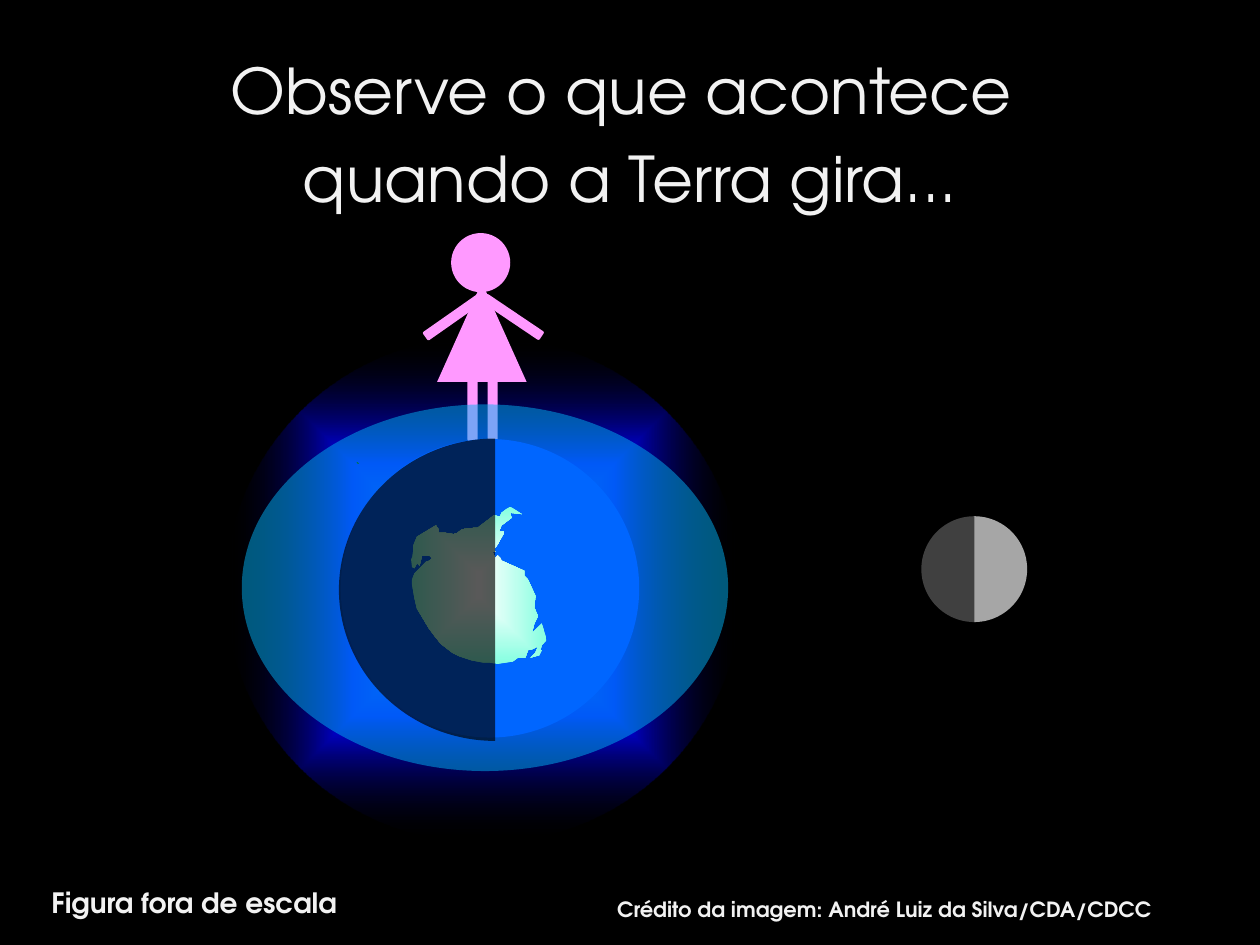
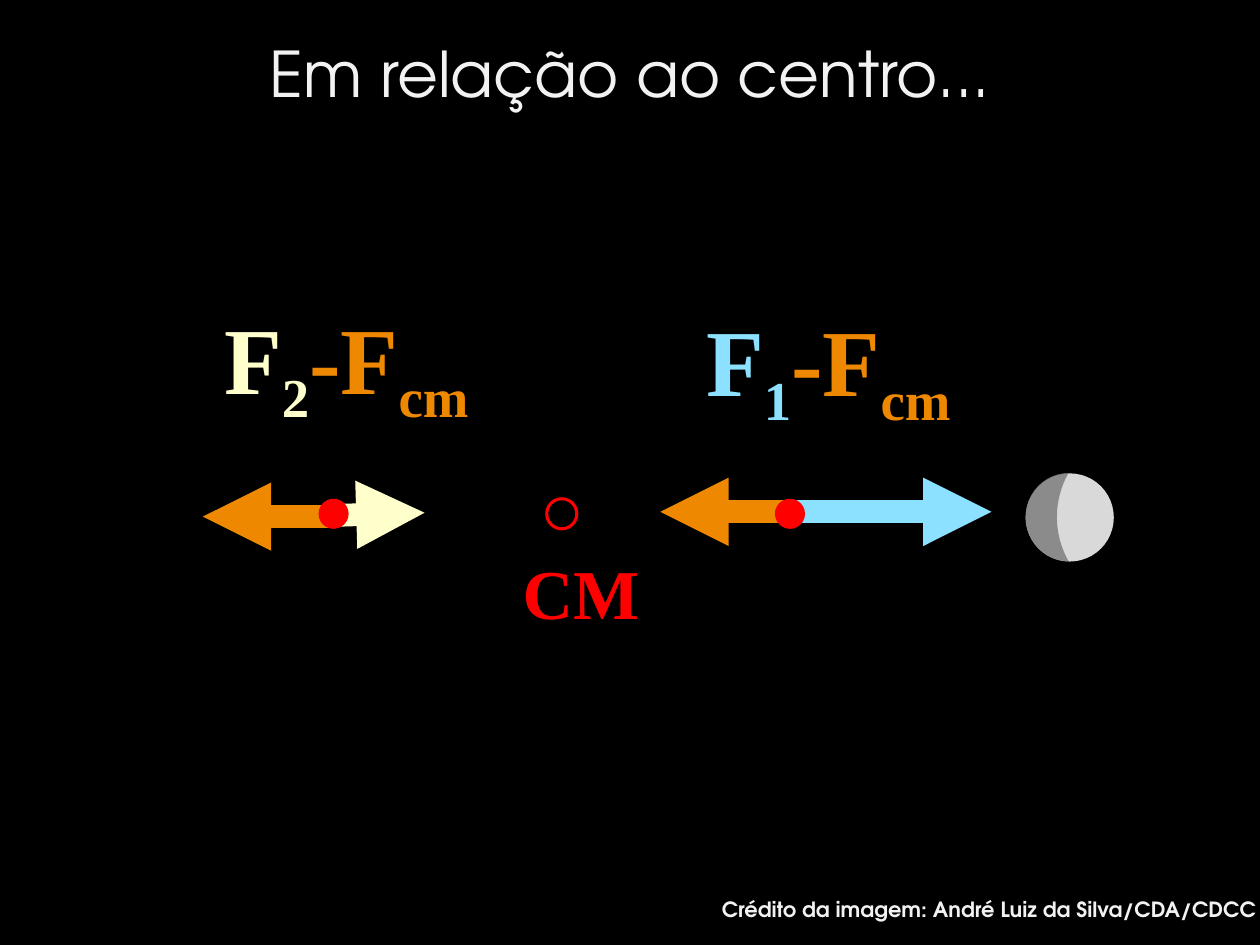
import pptx
import pptx.util
import pptx.dml.color
import pptx.enum.shapes
import pptx.enum.text
import pptx.oxml
import pptx.oxml.ns

Pt = pptx.util.Pt
Shape = pptx.enum.shapes.MSO_SHAPE
Align = pptx.enum.text.PP_ALIGN
qn = pptx.oxml.ns.qn

SANS, SERIF = "TeX Gyre Adventor", "Times New Roman"
COLORS = {
    "space": "000000", "text": "F2F2F2", "girl": "FF99FF", "earth": "0066FF",
    "halo": "0000FF", "tide": "00B0F0", "ice": "FFFFFF", "coast": "85FFE0",
    "isle": "008000", "day": "A6A6A6", "night": "404040", "moon": "D9D9D9",
    "shade": "707070", "mass": "EE8800", "near": "8BE1FF", "far": "FFFFCC",
    "red": "FF0000",
}
# Outlines in hundredths of an inch
LAND = [
    (401, 526), (407, 525), (411, 522), (417, 522), (419, 516), (423, 515),
    (427, 513), (425, 518), (421, 522), (428, 520), (430, 516), (429, 516),
    (430, 512), (434, 508), (430, 495), (422, 503), (424, 495), (427, 489),
    (424, 482), (425, 473), (419, 460), (416, 457), (416, 453), (398, 445),
    (397, 443), (395, 441), (393, 443), (391, 438), (393, 438), (392, 436),
    (395, 432), (396, 430), (400, 423), (400, 422), (396, 422), (398, 417),
    (406, 411), (405, 407), (414, 408), (405, 402), (402, 404), (398, 407),
    (397, 410), (392, 409), (379, 419), (376, 419), (367, 420), (363, 423),
    (360, 424), (354, 423), (348, 423), (348, 420), (346, 417), (331, 426),
    (328, 433), (328, 437), (327, 444), (326, 442), (327, 450), (329, 451),
    (331, 447), (333, 449), (335, 441), (341, 441), (343, 443), (341, 445),
    (338, 446), (332, 452), (329, 455), (327, 460), (327, 464), (329, 475),
    (331, 483), (340, 498), (346, 506), (350, 511), (359, 518), (365, 521),
    (374, 524), (384, 526), (389, 526), (395, 527),
]
ISLE = [(283, 367), (284, 368), (285, 368), (284, 367)]


def rgb(name):
    return pptx.dml.color.RGBColor.from_string(COLORS[name])


def paint(item, color, alpha=None):
    """Fill with one colour, without outline or shadow."""
    item.shadow.inherit = False
    item.line.fill.background()
    item.fill.solid()
    item.fill.fore_color.rgb = rgb(color)
    if alpha:
        tone = item.fill._xPr.find(qn("a:solidFill"))[0]
        tone.append(tone.makeelement(qn("a:alpha"), {"val": str(alpha * 1000)}))


def glow(item, stops):
    """Swap the fill for a gradient from the centre; stops are (percent, colour, opacity)."""
    marks = "".join(
        f'<a:gs pos="{pos * 1000}"><a:srgbClr val="{COLORS[color]}">'
        f'<a:alpha val="{alpha * 1000}"/></a:srgbClr></a:gs>'
        for pos, color, alpha in stops)
    grad = pptx.oxml.parse_xml(
        f'<a:gradFill {pptx.oxml.ns.nsdecls("a")} rotWithShape="1"><a:gsLst>{marks}</a:gsLst>'
        '<a:path path="shape"><a:fillToRect l="50000" t="50000" r="50000" b="50000"/>'
        '</a:path></a:gradFill>')
    old = item.fill._xPr.find(qn("a:solidFill"))
    old.getparent().replace(old, grad)


def add(shapes, kind, box, color, alpha=None, turn=0):
    item = shapes.add_shape(kind, *map(Pt, box))
    item.rotation = turn
    paint(item, color, alpha)
    return item


def half(shapes, box, ends, color, alpha=None):
    """Draw half a disc; box bounds the whole disc, ends are angles in degrees."""
    item = add(shapes, Shape.CHORD, box, color, alpha)
    for i, angle in enumerate(ends):
        item.adjustments[i] = angle * 0.6


def trace(shapes, points, color):
    pen = shapes.build_freeform(*points[0], scale=Pt(0.72))
    pen.add_line_segments(points[1:], close=True)
    item = pen.convert_to_shape()
    paint(item, color)
    return item


def write(par, text, size, color, face=SANS, bold=True, base=0):
    run = par.add_run()
    run.text = text
    font = run.font
    font.size, font.name, font.bold = Pt(size), face, bold
    font.color.rgb = rgb(color)
    if base:
        run._r.get_or_add_rPr().set("baseline", str(base * 1000))


def label(slide, box, runs, size, face=SANS, align=Align.CENTER):
    """Add a one-line box; runs are (text, colour, baseline percent)."""
    frame = slide.shapes.add_textbox(*map(Pt, box)).text_frame
    frame.word_wrap = True
    frame.auto_size = pptx.enum.text.MSO_AUTO_SIZE.SHAPE_TO_FIT_TEXT
    par = frame.paragraphs[0]
    par.alignment = align
    for text, color, base in runs:
        write(par, text, size, color, face, base=base)


def start(deck, top, lines, left):
    """Add a slide with its title lines and the credit."""
    slide = deck.slides.add_slide(deck.slide_layouts[5])
    title = slide.shapes.title
    title.left, title.top, title.width, title.height = map(Pt, (0, top, 720, 90))
    frame = title.text_frame
    frame.auto_size = pptx.enum.text.MSO_AUTO_SIZE.NONE
    frame.vertical_anchor = pptx.enum.text.MSO_ANCHOR.TOP
    for i, text in enumerate(lines):
        par = frame.add_paragraph() if i else frame.paragraphs[0]
        par.alignment = Align.CENTER
        par.line_spacing = 1.0
        par.space_before = Pt(7.2 if i else 0)
        write(par, text, 36, "text", bold=False)
    label(slide, (left, 509, 726 - left, 21.6),
          [("Crédito da imagem: André Luiz da Silva/CDA/CDCC", "text", 0)], 12, align=Align.LEFT)
    return slide


def girl(slide):
    parts = slide.shapes.add_group_shape().shapes
    limbs = [(267.1, 212.4, 0), (278.6, 212.4, 0), (290.2, 161.3, 124), (256.3, 161.3, 55)]
    for left, top, turn in limbs:
        add(parts, Shape.ROUNDED_RECTANGLE, (left, top, 5.8, 39.6), "girl", turn=turn)
    add(parts, Shape.ISOSCELES_TRIANGLE, (249.8, 161.3, 51.1, 56.9), "girl")
    add(parts, Shape.OVAL, (257.8, 133.2, 33.8, 33.8), "girl")


def arrow(slide, ends, color):
    line = slide.shapes.add_connector(pptx.enum.shapes.MSO_CONNECTOR.STRAIGHT, *map(Pt, ends))
    line.line.width = Pt(13)
    line.line.color.rgb = rgb(color)
    edge = line.line._get_or_add_ln()
    edge.append(edge.makeelement(qn("a:tailEnd"), {"type": "triangle"}))
    props = line._element.spPr
    props.append(props.makeelement(qn("a:effectLst"), {}))


def force(slide, left, top, width, digit, color):
    label(slide, (left, top, width, 72.7),
          [("F", color, 0), (digit, color, -25), ("-F", "mass", 0), ("cm", "mass", -25)],
          54, SERIF)


def spin(deck):
    slide = start(deck, 26, ["Observe o que acontece ", "quando a Terra gira..."], 345.6)
    shapes = slide.shapes
    halo = add(shapes, Shape.OVAL, (128.9, 192.2, 294.5, 289.4), "earth")
    glow(halo, [(0, "earth", 100), (50, "halo", 100), (100, "space", 0)])
    girl(slide)
    add(shapes, Shape.OVAL, (138.2, 231.1, 277.9, 209.5), "tide", 51)

    disc = (526.5, 295, 60.5, 60.5)
    half(shapes, disc, (270, 90), "day")
    half(shapes, disc, (90, 270), "night")

    add(shapes, Shape.OVAL, (194.7, 250.9, 170.6, 170.6), "earth")
    land = trace(shapes, LAND, "ice")
    glow(land, [(3, "ice", 100), (100, "coast", 100)])
    trace(shapes, ISLE, "isle")
    half(shapes, (193.7, 250.6, 178.6, 172.8), (90, 270), "space", 65)
    label(slide, (16, 502.6, 190, 26.6), [("Figura fora de escala", "text", 0)], 16)


def forces(deck):
    slide = start(deck, 16, ["Em relação ao centro..."], 405.4)
    shapes = slide.shapes
    arrow(slide, (190.1, 295.2, 115.9, 295.2), "mass")
    arrow(slide, (450.7, 292.5, 377.3, 292.5), "mass")
    arrow(slide, (452.9, 292.5, 566.6, 292.5), "near")
    arrow(slide, (192.2, 294.5, 242.6, 293), "far")
    label(slide, (286.6, 310.3, 90.7, 55.4), [("CM", "red", 0)], 40, SERIF)

    add(shapes, Shape.OVAL, (586.1, 270.5, 50.4, 50.4), "moon")
    dark = add(shapes, Shape.MOON, (586.1, 270.3, 24.5, 50.4), "shade", 74)
    dark.adjustments[0] = 0.73

    force(slide, 87.8, 167.8, 220.3, "2", "far")
    force(slide, 377.3, 169.2, 192.2, "1", "near")
    dots = [add(shapes, Shape.OVAL, (182 + 130.4 * i, 285, 17.2, 17.2), "red") for i in range(3)]
    ring = dots[1]
    ring.fill.background()
    ring.line.color.rgb = rgb("red")
    ring.line.width = Pt(1.75)


def main():
    deck = pptx.Presentation()
    deck.slide_width, deck.slide_height = Pt(720), Pt(540)
    back = deck.slide_master.background.fill
    back.solid()
    back.fore_color.rgb = rgb("space")
    spin(deck)
    forces(deck)
    deck.save("out.pptx")


if __name__ == "__main__":
    main()
